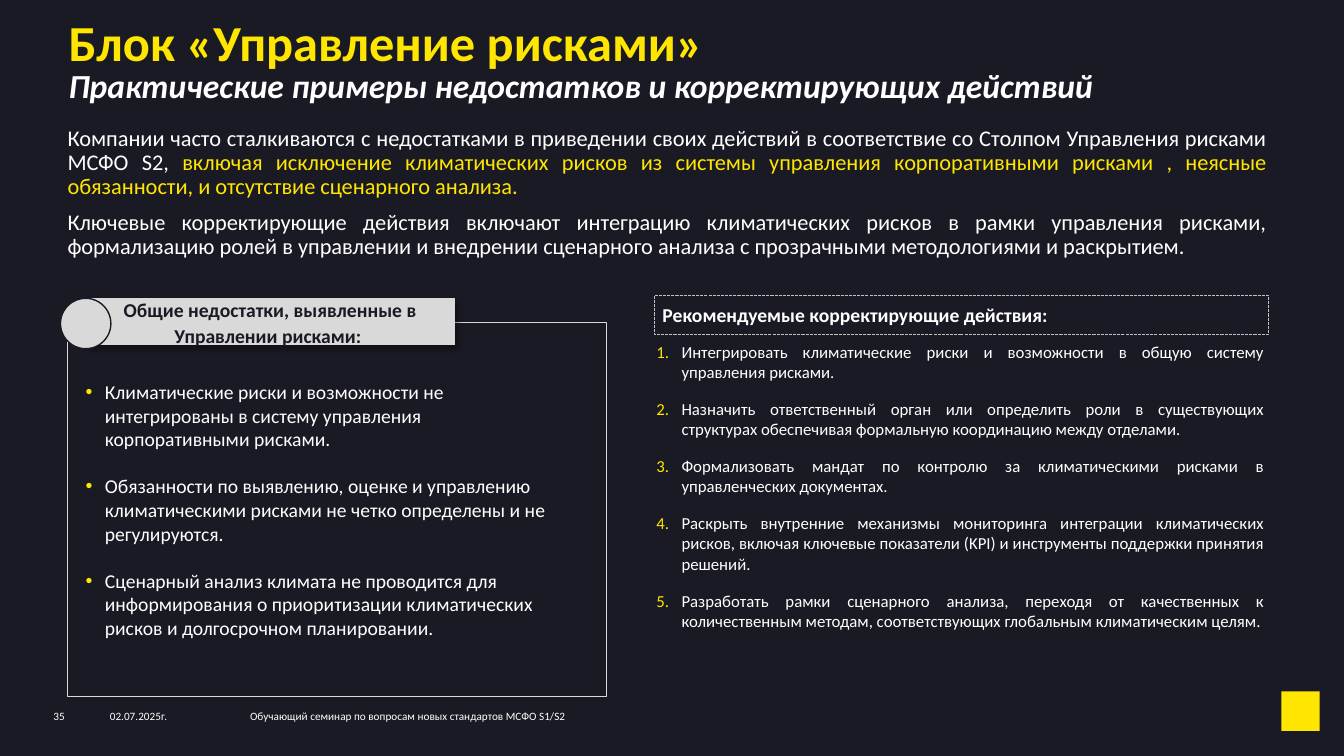
import pptx
import pptx.util
import pptx.dml.color
import pptx.enum.dml
import pptx.enum.shapes
import pptx.enum.text
import pptx.oxml
import pptx.oxml.ns
from lxml import etree

Inches = pptx.util.Inches
Pt = pptx.util.Pt
RGBColor = pptx.dml.color.RGBColor
Shape = pptx.enum.shapes.MSO_SHAPE
Align = pptx.enum.text.PP_ALIGN
Anchor = pptx.enum.text.MSO_ANCHOR
qn = pptx.oxml.ns.qn

DARK = RGBColor(0x1A, 0x1A, 0x24)
YELLOW = RGBColor(0xFF, 0xE6, 0x00)
WHITE = RGBColor(0xFF, 0xFF, 0xFF)
PALE = RGBColor(0xD9, 0xD9, 0xD9)
GREY = RGBColor(0xC0, 0xC0, 0xC0)

deck = pptx.Presentation()
deck.slide_width, deck.slide_height = Inches(13.33), Inches(7.5)
page = deck.slides.add_slide(deck.slide_layouts[6])
page.background.fill.solid()
page.background.fill.fore_color.rgb = DARK


def add_box(place, kind=None, fill=None, line=None, width=0.75):
    """Add a text box, or a preset shape when a kind is given."""
    area = [Inches(length) for length in place]
    if kind is None:
        return page.shapes.add_textbox(*area)
    box = page.shapes.add_shape(kind, *area)
    box.shadow.inherit = False
    if fill is None:
        box.fill.background()
    else:
        box.fill.solid()
        box.fill.fore_color.rgb = fill
    if line is None:
        box.line.fill.background()
    else:
        box.line.color.rgb = line
        box.line.width = Pt(width)
    return box


def write(box, paragraphs, size, margins=(0, 0, 0, 0), anchor=Anchor.TOP,
          gap=0, bullet=None, indent=0, bold=False, **layout):
    """Fill a box; each paragraph is a list of (text, format values)."""
    frame = box.text_frame
    frame.word_wrap = True
    frame.vertical_anchor = anchor
    for side, margin in zip(("left", "top", "right", "bottom"), margins):
        setattr(frame, f"margin_{side}", Inches(margin))
    for index, spans in enumerate(paragraphs):
        para = frame.paragraphs[0] if index == 0 else frame.add_paragraph()
        if bullet:
            settings = para._p.get_or_add_pPr()
            settings.set("marL", str(Inches(indent)))
            settings.set("indent", str(-Inches(indent)))
            colour = etree.SubElement(settings, qn("a:buClr"))
            etree.SubElement(colour, qn("a:srgbClr"), val=str(YELLOW))
            if bullet == "number":
                etree.SubElement(settings, qn("a:buAutoNum"), type="arabicPeriod")
            else:
                etree.SubElement(settings, qn("a:buFont"), typeface="Arial")
                etree.SubElement(settings, qn("a:buChar"), char=bullet)
        for name, value in {"alignment": Align.LEFT, **layout}.items():
            setattr(para, name, value)
        if index:
            para.space_before = Pt(gap)
        for text, values in spans:
            if text == "\n":
                para.add_line_break()
                continue
            span = para.add_run()
            span.text = text
            span.font.color.rgb = values.get("colour", WHITE)
            font = {"name": "Calibri", "size": Pt(size), "bold": bold, **values}
            for name, value in font.items():
                if name != "colour":
                    setattr(span.font, name, value)


# Title and subtitle
write(add_box((0.68, 0.2, 12.47, 0.7)), [[
    ("Блок «Управление рисками»", {"colour": YELLOW}),
    ("\n", {}),
    ("Практические примеры недостатков и корректирующих действий",
     {"size": Pt(24), "italic": True}),
]], 36, bold=True, line_spacing=0.85)

# Introduction
write(add_box((0.67, 1.22, 11.9, 1.61)), [
    [("Компании часто сталкиваются с недостатками в приведении своих действий "
      "в соответствие со Столпом Управления рисками МСФО S2, ", {}),
     ("включая исключение климатических рисков из системы управления "
      "корпоративными рисками , неясные обязанности, и отсутствие "
      "сценарного анализа.", {"colour": YELLOW})],
    [("Ключевые корректирующие действия включают интеграцию климатических "
      "рисков в рамки управления рисками, формализацию ролей в управлении и "
      "внедрении сценарного анализа с прозрачными методологиями и "
      "раскрытием.", {})],
], 16, (0, 0.04, 0, 0), gap=4, alignment=Align.JUSTIFY, line_spacing=0.9,
    space_after=Pt(4))

# Shortcomings: frame, banner with shadow, round marker
add_box((0.67, 3.2, 5.35, 3.71), Shape.RECTANGLE, line=PALE)
banner = add_box((0.85, 2.96, 3.66, 0.46), Shape.RECTANGLE, PALE, PALE)
effects = banner._element.spPr.find(qn("a:effectLst"))
shadow = etree.SubElement(effects, qn("a:outerShdw"), blurRad=str(Pt(4)),
                          dist=str(Pt(3)), dir="2700000", algn="tl")
shade = etree.SubElement(shadow, qn("a:srgbClr"), val="000000")
etree.SubElement(shade, qn("a:alpha"), val="40000")
write(banner, [[("Общие недостатки, выявленные в Управлении рисками: ",
                 {"colour": DARK})]],
      14, anchor=Anchor.MIDDLE, bold=True, alignment=Align.CENTER, line_spacing=1.1)
add_box((0.6, 2.96, 0.5, 0.5), Shape.FLOWCHART_CONNECTOR, PALE, DARK, 1)

shortcomings = [
    "Климатические риски и возможности не интегрированы в систему управления "
    "корпоративными рисками.",
    "Обязанности по выявлению, оценке и управлению климатическими рисками "
    "не четко определены и не регулируются.",
    "Сценарный анализ климата не проводится для информирования о "
    "приоритизации климатических рисков и долгосрочном планировании.",
]
write(add_box((0.85, 3.73, 4.64, 2.87)), [[(text, {})] for text in shortcomings],
      14, (0, 0.04, 0, 0), gap=17, bullet="•", indent=0.19)

# Corrective actions: dashed heading and numbered list
heading = add_box((6.49, 2.93, 6.09, 0.39), Shape.RECTANGLE, line=GREY)
heading.line.dash_style = pptx.enum.dml.MSO_LINE.SQUARE_DOT
write(heading, [[("Рекомендуемые корректирующие действия:", {})]], 14,
      (0.08, 0.08, 0.08, 0.08), Anchor.MIDDLE, bold=True)

actions = [
    "Интегрировать климатические риски и возможности в общую систему "
    "управления рисками.",
    "Назначить ответственный орган или определить роли в существующих "
    "структурах обеспечивая формальную координацию между отделами.",
    "Формализовать мандат по контролю за климатическими рисками в "
    "управленческих документах.",
    "Раскрыть внутренние механизмы мониторинга интеграции климатических "
    "рисков, включая ключевые показатели (KPI) и инструменты поддержки "
    "принятия решений.",
    "Разработать рамки сценарного анализа, переходя от качественных к "
    "количественным методам, соответствующих глобальным климатическим целям.",
]
write(add_box((6.2, 3.34, 6.44, 3.2)), [[(text, {})] for text in actions],
      12, (0.31, 0.05, 0.1, 0.05), gap=6, bullet="number", indent=0.25,
      alignment=Align.JUSTIFY, space_after=Pt(6))

# Footer
for left, width, text in [
    (0.53, 0.56, "35"),
    (1.09, 1.4, "02.07.2025г."),
    (2.48, 4.18, "Обучающий семинар по вопросам новых стандартов МСФО S1/S2"),
]:
    write(add_box((left, 7.04, width, 0.13)), [[(text, {})]], 8)

# Plain corner mark
add_box((12.71, 6.86, 0.38, 0.39), Shape.RECTANGLE, YELLOW)

deck.save("out.pptx")
